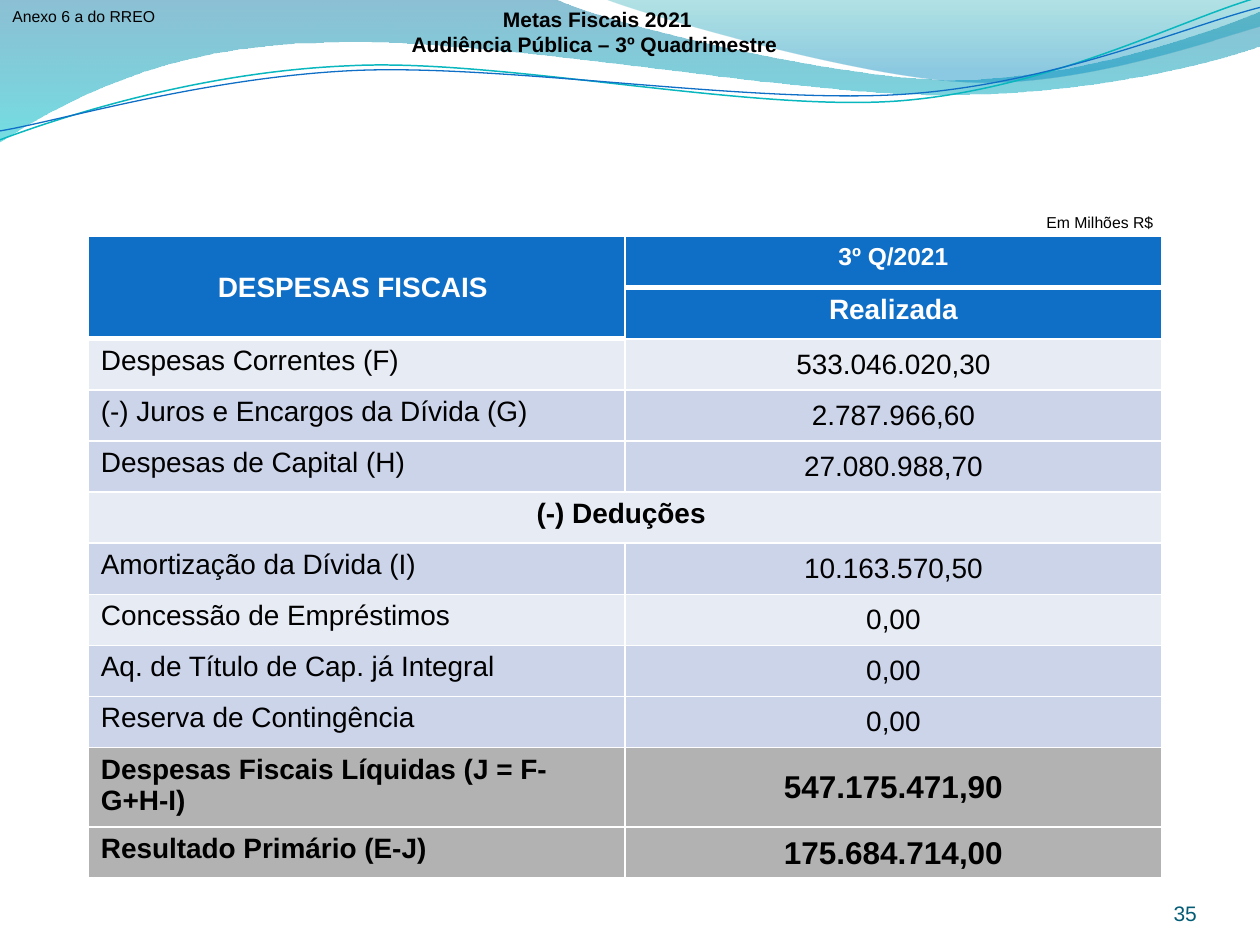
from dataclasses import dataclass
from typing import Optional

from pptx import Presentation
from pptx.dml.color import RGBColor
from pptx.enum.text import MSO_ANCHOR, MSO_AUTO_SIZE, PP_ALIGN
from pptx.oxml import parse_xml
from pptx.oxml.ns import nsdecls, qn
from pptx.util import Cm, Pt

FONT = "Arial"
WHITE = RGBColor(0xFF, 0xFF, 0xFF)
BLACK = RGBColor(0, 0, 0)
BLUE = RGBColor(0x0F, 0x6F, 0xC6)
TEAL = RGBColor(0x09, 0xB7, 0xBF)
PAGE_BLUE = RGBColor(0x03, 0x5C, 0x75)
PALE = RGBColor(0xE7, 0xEB, 0xF4)
LAVENDER = RGBColor(0xCC, 0xD4, 0xEA)
GREY = RGBColor(0xB2, 0xB2, 0xB2)
THIN, THICK = 0.96, 3


@dataclass
class Stop:
    position: float
    color: RGBColor
    alpha: int


@dataclass
class Wave:
    """Outline in cm: a segment of one point is a line, of three a Bézier curve."""
    start: tuple
    segments: list
    stops: Optional[list] = None
    angle: int = 0
    line: Optional[RGBColor] = None
    width: float = 0
    rotation: float = 0


@dataclass
class Label:
    lines: list
    box: tuple
    size: int
    align: PP_ALIGN
    anchor: MSO_ANCHOR = MSO_ANCHOR.TOP
    color: RGBColor = BLACK
    bold: bool = False
    margins: tuple = (0.25, 0.13)
    grows: bool = True


@dataclass
class Expense:
    name: str
    value: str
    fill: RGBColor
    total: bool = False


WAVES = [
    Wave((0, 0), [
        [(11.18, -0.03)],
        [(12.09, 0.43), (16.87, 1.6), (19.25, 1.6)],
        [(21.67, 1.6), (24.33, 0.66), (25.4, 0.23)],
        [(25.43, 0.91)],
        [(24.97, 1.12), (22.1, 1.93), (18.95, 1.91)],
        [(15.8, 1.91), (9.7, 0.71), (6.53, 0.86)],
        [(3.28, 0.89), (1.17, 2.11), (-0.03, 2.87)],
    ], [Stop(0, RGBColor(0, 0x74, 0xA0), 45), Stop(1, RGBColor(0, 0xC4, 0xCD), 55)], 270),
    Wave((12.17, -0.03), [
        [(12.93, 0.28), (17.32, 1.57), (19.53, 1.65)],
        [(21.74, 1.75), (24.41, 0.81), (25.4, 0.53)],
        [(25.4, 0)],
    ], [Stop(0.2, RGBColor(0, 0x8A, 0xBF), 45), Stop(1, RGBColor(0, 0xA0, 0xA8), 30)], 90),
    Wave((-0.05, 2.22), [
        [(1.19, 1.82), (4.02, 1.04), (7.05, 1.06)],
        [(10.05, 1.04), (15.02, 2.37), (18.08, 2.29)],
        [(21.13, 2.2), (23.86, 0.91), (25.41, 0.55)],
    ], line=TEAL, width=0.85, rotation=357.3),
    Wave((-0.04, 2.04), [
        [(1.16, 1.9), (4.17, 1.15), (7.2, 1.16)],
        [(10.25, 1.18), (15.13, 2.22), (18.19, 2.16)],
        [(21.22, 2.1), (23.93, 1.06), (25.45, 0.75)],
    ], line=BLUE, width=0.75, rotation=357.3),
]

LABELS = [
    Label(["35"], (22.02, 17.65, 2.11, 1.02), 12, PP_ALIGN.RIGHT,
          MSO_ANCHOR.BOTTOM, PAGE_BLUE, margins=(0, 0), grows=False),
    Label(["Em Milhões R$"], (20.82, 4.16, 2.7, 0.64), 9, PP_ALIGN.CENTER),
    Label(["Anexo 6 a do RREO"], (0, 0, 3.45, 0.64), 9, PP_ALIGN.LEFT),
    Label(["Metas Fiscais 2021", "Audiência Pública – 3º Quadrimestre "],
          (7.74, 0, 8.61, 1.27), 12, PP_ALIGN.CENTER, MSO_ANCHOR.MIDDLE, bold=True),
]

DEDUCTIONS = "(-) Deduções "
EXPENSES = [
    Expense("Despesas Correntes (F)", "533.046.020,30", PALE),
    Expense("(-) Juros e Encargos da Dívida (G)", "2.787.966,60", LAVENDER),
    Expense("Despesas de Capital (H)", "27.080.988,70", LAVENDER),
    Expense(DEDUCTIONS, "", PALE),
    Expense("Amortização da Dívida (I)", "10.163.570,50", LAVENDER),
    Expense("Concessão de Empréstimos", "0,00", PALE),
    Expense("Aq. de Título de Cap. já Integral", "0,00", LAVENDER),
    Expense("Reserva de Contingência", "0,00", LAVENDER),
    Expense("Despesas Fiscais Líquidas (J = F-G+H-I)", "547.175.471,90", GREY, True),
    Expense("Resultado Primário (E-J)", "175.684.714,00", GREY, True),
]
HEADER_ROWS = 2
ROW_HEIGHT, TALL_ROW_HEIGHT, COLUMN_WIDTH = 1.03, 1.6, 10.82


def bend(shape, segments: list) -> None:
    """Turn each run of three line steps that belongs to a curve into a Bézier step."""
    steps = iter(list(shape._element.spPr.iter(qn("a:lnTo"))))
    for segment in segments:
        group = [next(steps) for _ in segment]
        if len(group) == 3:
            curve = parse_xml(f'<a:cubicBezTo {nsdecls("a")}/>')
            group[0].addprevious(curve)
            for step in group:
                curve.append(step[0])
                step.getparent().remove(step)


def draw_wave(slide, wave: Wave) -> None:
    points = [point for segment in wave.segments for point in segment]
    builder = slide.shapes.build_freeform(*map(Cm, wave.start))
    builder.add_line_segments([(Cm(x), Cm(y)) for x, y in points], close=wave.stops is not None)
    shape = builder.convert_to_shape()
    bend(shape, wave.segments)
    shape.rotation = wave.rotation
    shape.shadow.inherit = False
    if wave.stops is None:
        shape.fill.background()
        shape.line.color.rgb = wave.line
        shape.line.width = Pt(wave.width)
        return
    shape.line.fill.background()
    shape.fill.gradient()
    shape.fill.gradient_angle = wave.angle
    for gradient_stop, stop in zip(shape.fill.gradient_stops, wave.stops):
        gradient_stop.position = stop.position
        gradient_stop.color.rgb = stop.color
    for color, stop in zip(shape._element.spPr.iter(qn("a:srgbClr")), wave.stops):
        color.append(parse_xml(f'<a:alpha {nsdecls("a")} val="{stop.alpha * 1000}"/>'))


def write(paragraph, text: str, size: int, color: RGBColor, bold: bool, align: PP_ALIGN) -> None:
    paragraph.alignment = align
    run = paragraph.add_run()
    run.text = text
    run.font.name, run.font.size, run.font.bold = FONT, Pt(size), bold
    run.font.color.rgb = color


def draw_label(slide, label: Label) -> None:
    frame = slide.shapes.add_textbox(*map(Cm, label.box)).text_frame
    frame.word_wrap = True
    frame.auto_size = MSO_AUTO_SIZE.SHAPE_TO_FIT_TEXT if label.grows else MSO_AUTO_SIZE.NONE
    frame.vertical_anchor = label.anchor
    frame.margin_left = frame.margin_right = Cm(label.margins[0])
    frame.margin_top = frame.margin_bottom = Cm(label.margins[1])
    for index, line in enumerate(label.lines):
        paragraph = frame.add_paragraph() if index else frame.paragraphs[0]
        write(paragraph, line, label.size, label.color, label.bold, label.align)


def style_cell(cell, fill: RGBColor, top: float = THIN, bottom: float = THIN) -> None:
    cell.fill.solid()
    cell.fill.fore_color.rgb = fill
    sides = (("L", THIN), ("R", THIN), ("T", top), ("B", bottom))
    for index, (side, width) in enumerate(sides):
        cell._tc.get_or_add_tcPr().insert(index, parse_xml(
            f'<a:ln{side} {nsdecls("a")} w="{Pt(width)}"><a:solidFill>'
            f'<a:srgbClr val="{WHITE}"/></a:solidFill></a:ln{side}>'))


def draw_table(slide) -> None:
    rows = HEADER_ROWS + len(EXPENSES)
    table = slide.shapes.add_table(rows, 2, Cm(1.78), Cm(4.77), Cm(2 * COLUMN_WIDTH),
                                   Cm((rows - 1) * ROW_HEIGHT + TALL_ROW_HEIGHT)).table
    table.first_row = table.horz_banding = False
    for column in table.columns:
        column.width = Cm(COLUMN_WIDTH)
    for row in table.rows:
        row.height = Cm(ROW_HEIGHT)
    table.rows[rows - 2].height = Cm(TALL_ROW_HEIGHT)

    # Header
    headings = [(0, 0, "DESPESAS FISCAIS ", 16), (0, 1, "3º Q/2021", 14), (1, 1, "Realizada", 16)]
    for row, column, text, size in headings:
        write(table.cell(row, column).text_frame.paragraphs[0], text, size, WHITE, True, PP_ALIGN.CENTER)
    for row, column, top, bottom in ((0, 0, THIN, THICK), (0, 1, THIN, THICK),
                                     (1, 0, THIN, THICK), (1, 1, THICK, THIN)):
        style_cell(table.cell(row, column), BLUE, top, bottom)
    table.cell(0, 0).merge(table.cell(1, 0))
    table.cell(0, 0).vertical_anchor = MSO_ANCHOR.MIDDLE

    # Expenses
    for row, expense in enumerate(EXPENSES, HEADER_ROWS):
        name, value = table.cell(row, 0), table.cell(row, 1)
        style_cell(name, expense.fill, top=THICK if row == HEADER_ROWS else THIN)
        style_cell(value, expense.fill)
        section = expense.name == DEDUCTIONS
        write(name.text_frame.paragraphs[0], expense.name, 16, BLACK, section or expense.total,
              PP_ALIGN.CENTER if section else PP_ALIGN.LEFT)
        if section:
            name.merge(value)
            continue
        value.vertical_anchor = MSO_ANCHOR.MIDDLE
        if expense.total:
            value.margin_left = value.margin_right = value.margin_top = Cm(0.03)
            value.margin_bottom = 0
        write(value.text_frame.paragraphs[0], expense.value, 18 if expense.total else 16,
              BLACK, expense.total, PP_ALIGN.CENTER)


def main() -> None:
    deck = Presentation()
    deck.slide_width, deck.slide_height = Cm(25.4), Cm(19.05)
    slide = deck.slides.add_slide(deck.slide_layouts[6])
    for wave in WAVES:
        draw_wave(slide, wave)
    draw_table(slide)
    for label in LABELS:
        draw_label(slide, label)
    deck.save("out.pptx")


if __name__ == "__main__":
    main()
